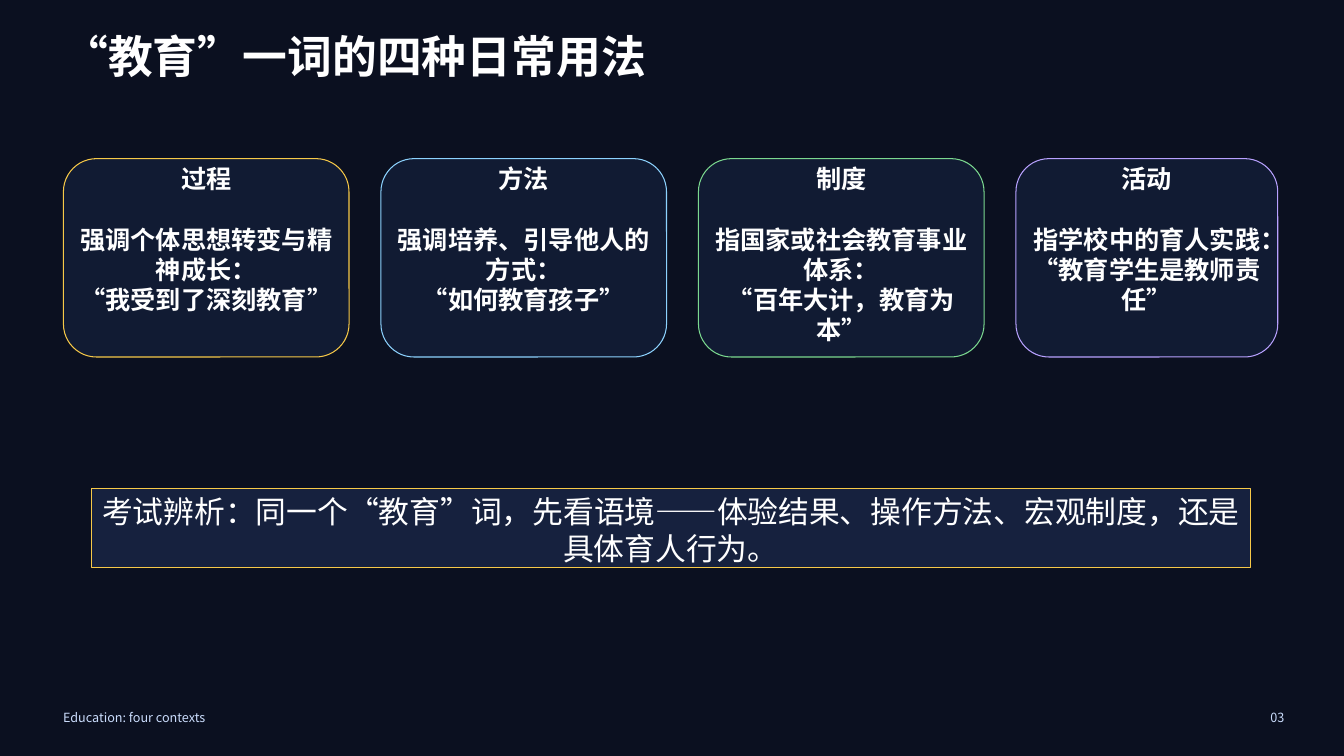
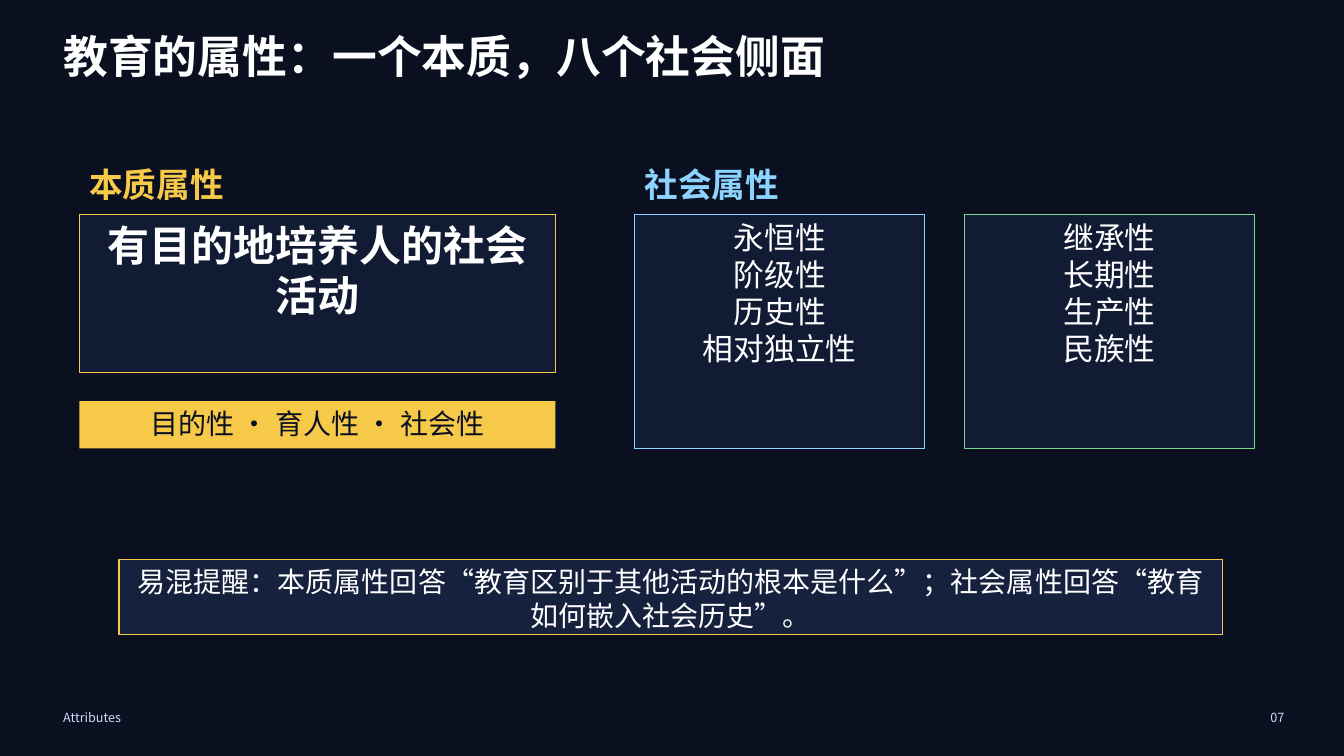
from lxml.etree import SubElement
from pptx import Presentation
from pptx.dml.color import RGBColor
from pptx.enum.shapes import MSO_SHAPE
from pptx.enum.text import MSO_ANCHOR, MSO_AUTO_SIZE, PP_ALIGN
from pptx.oxml.ns import qn
from pptx.util import Pt

FONT = "Noto Sans CJK SC"
NAVY = RGBColor(0x0B, 0x10, 0x20)
PANEL = RGBColor(0x11, 0x1B, 0x33)
NOTE = RGBColor(0x16, 0x21, 0x3E)
WHITE = RGBColor(0xFF, 0xFF, 0xFF)
PALE = RGBColor(0xCA, 0xDC, 0xFC)
GOLD = RGBColor(0xF7, 0xC9, 0x48)
SKY = RGBColor(0x8D, 0xD3, 0xFF)
GREEN = RGBColor(0x7B, 0xD8, 0x8F)
VIOLET = RGBColor(0xB8, 0xA1, 0xFF)


def set_text(sp, text, size=22, color=WHITE, bold=False,
             align=PP_ALIGN.CENTER, gap=0):
    """Write one paragraph per line; gap is the space after the first."""
    tf = sp.text_frame
    tf.word_wrap = True
    tf.auto_size = MSO_AUTO_SIZE.NONE
    tf.vertical_anchor = MSO_ANCHOR.TOP
    for i, line in enumerate(text.split("\n")):
        p = tf.paragraphs[0] if i == 0 else tf.add_paragraph()
        p.alignment = align
        p.space_before = Pt(gap if i == 1 else 0)
        r = p.add_run()
        r.text = line
        r.font.size = Pt(size)
        r.font.bold = bold
        r.font.color.rgb = color
        r.font.name = FONT
        SubElement(r.font._element, qn("a:ea"), typeface=FONT)


def add_text(s, box, text, **fmt):
    sp = s.shapes.add_textbox(*map(Pt, box))
    set_text(sp, text, **fmt)


def add_panel(s, box, fill=PANEL, line=None, text=None,
              kind=MSO_SHAPE.RECTANGLE, **fmt):
    sp = s.shapes.add_shape(kind, *map(Pt, box))
    sp.shadow.inherit = False
    sp.fill.solid()
    sp.fill.fore_color.rgb = fill
    if line is None:
        sp.line.fill.background()
    else:
        sp.line.color.rgb = line
        sp.line.width = Pt(0.75)
    if text:
        set_text(sp, text, **fmt)


def add_slide(prs, title, footer, number):
    """Title and footer line shared by all slides."""
    s = prs.slides.add_slide(prs.slide_layouts.get_by_name("Title Only"))
    sp = s.shapes.title
    sp.left, sp.top, sp.width, sp.height = map(Pt, (38, 17, 816, 62.5))
    set_text(sp, title, size=32, bold=True, align=PP_ALIGN.LEFT)
    add_text(s, (38, 503.5, 680, 21.5), footer, size=9, color=PALE,
             align=PP_ALIGN.LEFT)
    add_text(s, (862, 503.5, 62.5, 21.5), number, size=9, color=PALE,
             align=PP_ALIGN.RIGHT)
    return s


def usage_slide(prs):
    s = add_slide(prs, "“教育”一词的四种日常用法", "Education: four contexts", "03")
    # Four usage cards
    cards = [
        (GOLD, 204, "过程\n强调个体思想转变与精神成长：\n“我受到了深刻教育”"),
        (SKY, 204, "方法\n强调培养、引导他人的方式：\n“如何教育孩子”"),
        (GREEN, 204, "制度\n指国家或社会教育事业体系：\n“百年大计，教育为本”"),
        (VIOLET, 187, "活动\n指学校中的育人实践：\n“教育学生是教师责任”"),
    ]
    for i, (color, width, text) in enumerate(cards):
        box = (45.3 + 226.8 * i, 113.3, width, 141.7)
        add_panel(s, box, line=color, kind=MSO_SHAPE.ROUNDED_RECTANGLE)
        add_text(s, box, text, size=18, bold=True, gap=21.6)
    # Exam note
    add_panel(s, (65.2, 348.7, 828, 56.7), NOTE, GOLD,
              "考试辨析：同一个“教育”词，先看语境——体验结果、操作方法、"
              "宏观制度，还是具体育人行为。")


def attributes_slide(prs):
    s = add_slide(prs, "教育的属性：一个本质，八个社会侧面", "Attributes", "07")
    left, right, top = 56.7, 453.5, 153
    # Column headings
    for x, text, color in ((left, "本质属性", GOLD), (right, "社会属性", SKY)):
        add_text(s, (x, 113.3, 227, 38), text, size=24, color=color,
                 bold=True, align=PP_ALIGN.LEFT)
    # Essential attribute
    add_panel(s, (left, top, 340, 113.3), line=GOLD,
              text="有目的地培养人的社会活动", size=30, bold=True)
    add_panel(s, (left, 286.5, 340, 33.8), GOLD,
              text="目的性 · 育人性 · 社会性", size=20, color=NAVY)
    # Social attributes
    lists = [(SKY, "永恒性\n阶级性\n历史性\n相对独立性"),
             (GREEN, "继承性\n长期性\n生产性\n民族性")]
    for i, (color, text) in enumerate(lists):
        add_panel(s, (right + 235.5 * i, top, 207, 167.3), line=color, text=text)
    # Reminder
    add_panel(s, (85, 399.7, 788, 53.7), NOTE, GOLD,
              "易混提醒：本质属性回答“教育区别于其他活动的根本是什么”；"
              "社会属性回答“教育如何嵌入社会历史”。", size=20)


def main():
    prs = Presentation()
    prs.slide_width, prs.slide_height = Pt(960), Pt(540)
    bg = prs.slide_master.background.fill
    bg.solid()
    bg.fore_color.rgb = NAVY
    usage_slide(prs)
    attributes_slide(prs)
    prs.save("out.pptx")


if __name__ == "__main__":
    main()
